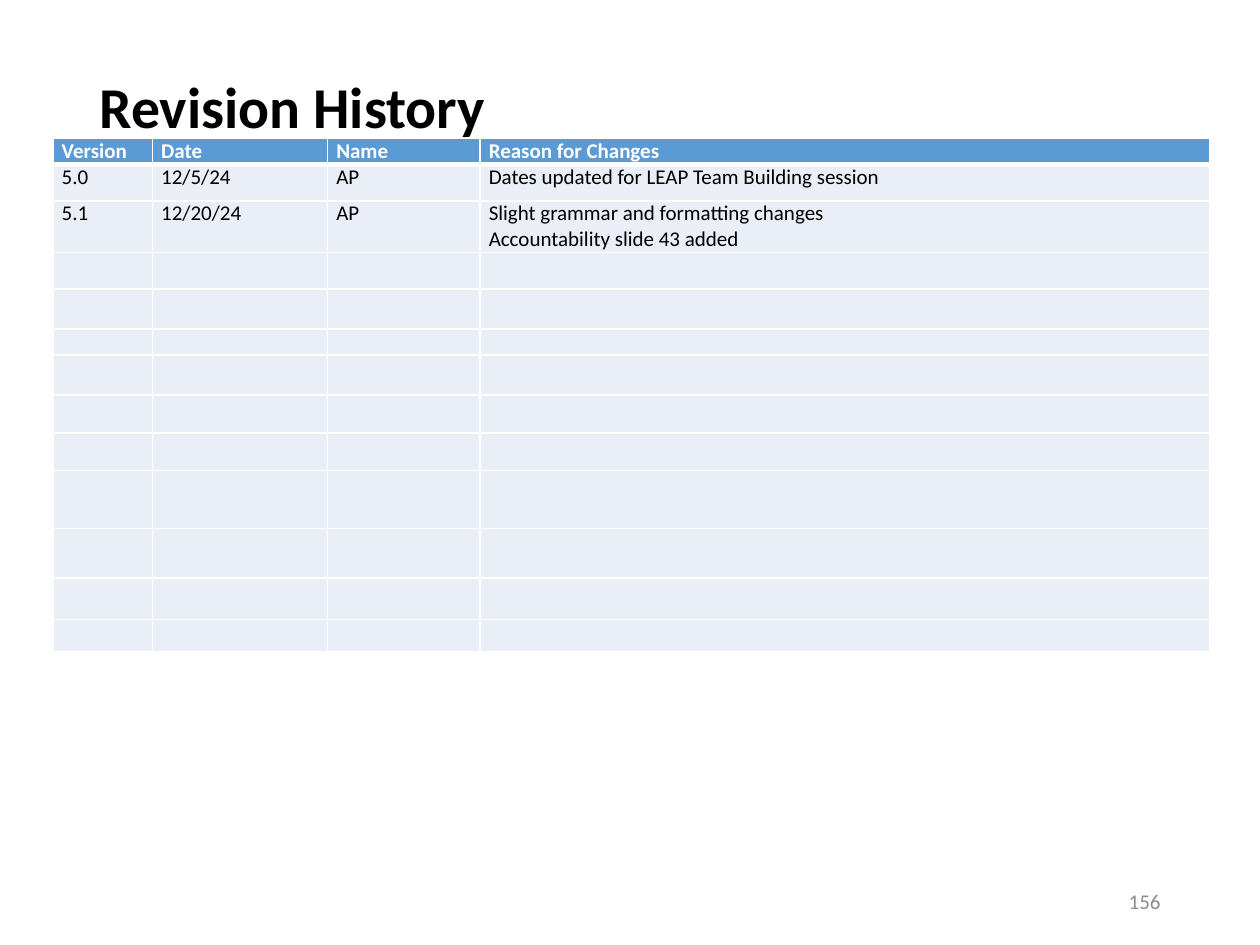
from dataclasses import dataclass

from lxml import etree
from pptx import Presentation
from pptx.dml.color import RGBColor
from pptx.enum import text
from pptx.oxml.ns import qn
from pptx.util import Inches, Pt


@dataclass(frozen=True)
class Theme:
    font: str = "Calibri"
    ink: str = "000000"
    white: str = "FFFFFF"
    header: str = "5B9BD5"
    body: str = "EAEFF7"
    muted: str = "8C8C8C"
    title_size: int = 33
    text_size: int = 12


class SlideBuilder:
    def __init__(self, prs, theme):
        self.theme = theme
        self.slide = prs.slides.add_slide(prs.slide_layouts[5])

    def style(self, p, size, color, bold=False):
        f = p.font
        f.name, f.size, f.bold = self.theme.font, Pt(size), bold
        f.color.rgb = RGBColor.from_string(color)

    def title(self, words, left, top, width, height):
        sp = self.slide.shapes.title
        sp.left, sp.top, sp.width, sp.height = map(Inches, (left, top, width, height))
        tf = sp.text_frame
        tf.text = words
        tf.word_wrap = True
        tf.auto_size = text.MSO_AUTO_SIZE.NONE
        tf.vertical_anchor = text.MSO_ANCHOR.MIDDLE
        tf.margin_bottom = Inches(0.55)
        p = tf.paragraphs[0]
        p.alignment = text.PP_ALIGN.LEFT
        p.line_spacing = 0.9
        self.style(p, self.theme.title_size, self.theme.ink, True)

    def page_number(self, words, left, top, width, height):
        sp = self.slide.shapes.add_textbox(*map(Inches, (left, top, width, height)))
        tf = sp.text_frame
        tf.word_wrap = True
        tf.vertical_anchor = text.MSO_ANCHOR.MIDDLE
        p = tf.paragraphs[0]
        p.text = words
        p.alignment = text.PP_ALIGN.RIGHT
        self.style(p, self.theme.text_size, self.theme.muted)

    def border(self, cell, side, width):
        tc_pr = cell._tc.get_or_add_tcPr()
        ln = etree.SubElement(tc_pr, qn(f"a:ln{side}"), w=str(Pt(width)))
        fill = etree.SubElement(ln, qn("a:solidFill"))
        etree.SubElement(fill, qn("a:srgbClr"), val=self.theme.white)

    def cell(self, cell, words, row):
        header = row == 0
        cell.margin_left = cell.margin_right = Inches(0.07)
        cell.margin_top = cell.margin_bottom = 0
        for side in "LRTB":
            heavy = (row, side) in ((0, "B"), (1, "T"))
            self.border(cell, side, 3 if heavy else 1)
        cell.fill.solid()
        cell.fill.fore_color.rgb = RGBColor.from_string(
            self.theme.header if header else self.theme.body)
        cell.text = words
        for p in cell.text_frame.paragraphs:
            self.style(p, self.theme.text_size,
                       self.theme.white if header else self.theme.ink, header)
            if not words:
                etree.SubElement(p._p, qn("a:endParaRPr"),
                                 sz=str(self.theme.text_size * 100))

    def table(self, rows, left, top, widths, heights):
        frame = self.slide.shapes.add_table(
            len(heights), len(widths), Inches(left), Inches(top),
            Inches(sum(widths)), Inches(sum(heights)))
        table = frame.table
        for column, width in zip(table.columns, widths):
            column.width = Inches(width)
        for i, height in enumerate(heights):
            table.rows[i].height = Inches(height)
            values = rows[i] if i < len(rows) else [""] * len(widths)
            for j, words in enumerate(values):
                self.cell(table.cell(i, j), words, i)


def main():
    prs = Presentation()
    prs.slide_width, prs.slide_height = Inches(10), Inches(7.5)
    s = SlideBuilder(prs, Theme())
    s.title("Revision History", 0.69, 0.4, 8.62, 1.45)
    revisions = [
        ("Version", "Date", "Name", "Reason for Changes"),
        ("5.0", "12/5/24", "AP", "Dates updated for LEAP Team Building session"),
        ("5.1", "12/20/24", "AP",
         "Slight grammar and formatting changes\nAccountability slide 43 added"),
    ]
    s.table(revisions, 0.42, 1.1, (0.79, 1.39, 1.21, 5.79),
            (0.2, 0.29, 0.41, 0.29, 0.32, 0.2, 0.32, 0.3, 0.3, 0.46, 0.39, 0.33, 0.26))
    s.page_number("156", 7.06, 6.95, 2.25, 0.4)
    prs.save("out.pptx")


if __name__ == "__main__":
    main()
